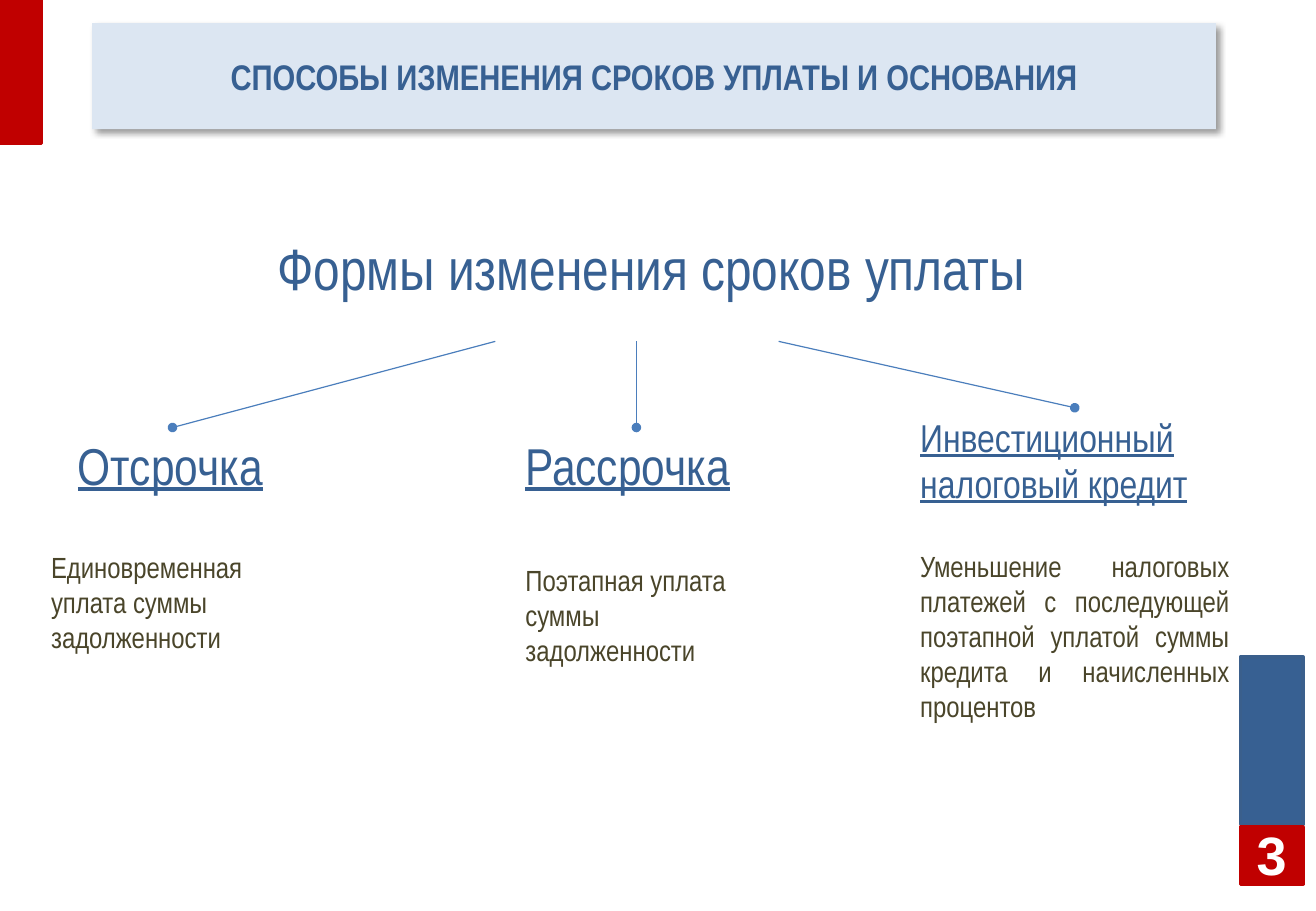
from lxml.etree import SubElement
from pptx import Presentation
from pptx.dml.color import RGBColor
from pptx.enum.shapes import MSO_CONNECTOR, MSO_SHAPE
from pptx.enum.text import MSO_ANCHOR, MSO_AUTO_SIZE, PP_ALIGN
from pptx.oxml.ns import qn
from pptx.util import Pt

COLORS = {"blue": "376092", "edge": "3A5F8C", "red": "C00000", "pale": "DCE6F2",
          "branch": "4B7EBC", "olive": "4A452A", "white": "FFFFFF", "shadow": "000000"}
NARROW = "Arial Narrow"

TITLE = "СПОСОБЫ ИЗМЕНЕНИЯ СРОКОВ УПЛАТЫ И ОСНОВАНИЯ"
TITLE_AREA = (7, 2.54, 85.39, 11.64)
TOPIC = "Формы изменения сроков уплаты"
TOPIC_AREA = (20.19, 24.9, 58.9, 9.08)
PAGE_NUMBER = "3"
NUMBER_AREA = (94.07, 91.05, 5.14, 5.37)

BLOCKS = [
    ((94.24, 72.12, 4.78, 18.41), "blue", "edge"),
    ((94.24, 90.79, 4.78, 6.27), "red", "red"),
    ((0, 0, 3.16, 15.73), "red", "red"),
]
BRANCH_TOP = 37.47
FORMS = [
    {"name": "Отсрочка", "size": 32, "name_area": (5.05, 46.93, 16.03, 8.18),
     "branch": (37.64, 13.11), "align": PP_ALIGN.LEFT,
     "detail": "Единовременная уплата суммы задолженности",
     "detail_area": (3.01, 59.68, 20.11, 12.92)},
    {"name": "Рассрочка", "size": 32, "name_area": (39.06, 46.93, 19.22, 8.18),
     "branch": (48.36, 48.36), "align": PP_ALIGN.LEFT,
     "detail": "Поэтапная уплата суммы задолженности",
     "detail_area": (39.06, 61.09, 18.51, 12.92)},
    {"name": "Инвестиционный налоговый кредит", "size": 24,
     "name_area": (69.06, 44.76, 25.24, 11.64),
     "branch": (59.17, 81.67), "align": PP_ALIGN.JUSTIFY,
     "detail": "Уменьшение налоговых платежей с последующей поэтапной уплатой "
               "суммы кредита и начисленных процентов",
     "detail_area": (69.06, 59.55, 25.24, 20.72)},
]

deck = Presentation()
deck.slide_width = Pt(812.88)
deck.slide_height = Pt(563)
deck.element.sldSz.attrib.pop("type", None)
page = deck.slides.add_slide(deck.slide_layouts[5])


def across(share):
    return round(deck.slide_width * share / 100)


def down(share):
    return round(deck.slide_height * share / 100)


def place(area):
    left, top, width, height = area
    return across(left), down(top), across(width), down(height)


def color(name):
    return RGBColor.from_string(COLORS[name])


def write(box, text, size, tint, font=NARROW, align=PP_ALIGN.LEFT, bold=False, underline=False):
    frame = box.text_frame
    frame.text = text
    frame.word_wrap = True
    frame.auto_size = MSO_AUTO_SIZE.NONE
    para = frame.paragraphs[0]
    para.alignment = align
    for span in para.runs:
        span.font.name = font
        span.font.size = Pt(size)
        span.font.bold = bold
        span.font.underline = underline
        span.font.color.rgb = color(tint)


def add_text(area, *content, **style):
    box = page.shapes.add_textbox(*place(area))
    write(box, *content, **style)
    return box


def center_tight(box):
    frame = box.text_frame
    frame.vertical_anchor = MSO_ANCHOR.MIDDLE
    frame.margin_left = frame.margin_right = 0


def add_block(area, fill, edge):
    block = page.shapes.add_shape(MSO_SHAPE.RECTANGLE, *place(area))
    block.shadow.inherit = False
    block.fill.solid()
    block.fill.fore_color.rgb = color(fill)
    block.line.color.rgb = color(edge)
    block.line.width = Pt(2)


def add_branch(start, end, bottom):
    branch = page.shapes.add_connector(
        MSO_CONNECTOR.STRAIGHT, across(start), down(BRANCH_TOP), across(end), down(bottom))
    branch.line.color.rgb = color("branch")
    branch.line.width = Pt(0.75)
    SubElement(branch.element.spPr.find(qn("a:ln")), qn("a:tailEnd"), type="oval")
    SubElement(branch.element.spPr, qn("a:effectLst"))


def add_title():
    title = page.shapes.title
    title.left, title.top, title.width, title.height = place(TITLE_AREA)
    title.fill.solid()
    title.fill.fore_color.rgb = color("pale")
    write(title, TITLE, 22, "blue", align=PP_ALIGN.CENTER, bold=True)
    center_tight(title)
    effects = SubElement(title.element.spPr, qn("a:effectLst"))
    shadow = SubElement(effects, qn("a:outerShdw"), blurRad=str(Pt(4)), dist=str(Pt(3)),
                        dir=str(45 * 60000), algn="tl", rotWithShape="0")
    tint = SubElement(shadow, qn("a:srgbClr"), val=COLORS["shadow"])
    SubElement(tint, qn("a:alpha"), val="40000")


for block in BLOCKS:
    add_block(*block)
number = add_text(NUMBER_AREA, PAGE_NUMBER, 33.4, "white", font="Arial",
                  align=PP_ALIGN.CENTER, bold=True)
center_tight(number)
add_title()
add_text(TOPIC_AREA, TOPIC, 36, "blue")
for form in FORMS:
    add_text(form["detail_area"], form["detail"], 18, "olive", align=form["align"])
    add_text(form["name_area"], form["name"], form["size"], "blue", underline=True)
    add_branch(*form["branch"], form["name_area"][1])

deck.save("out.pptx")
